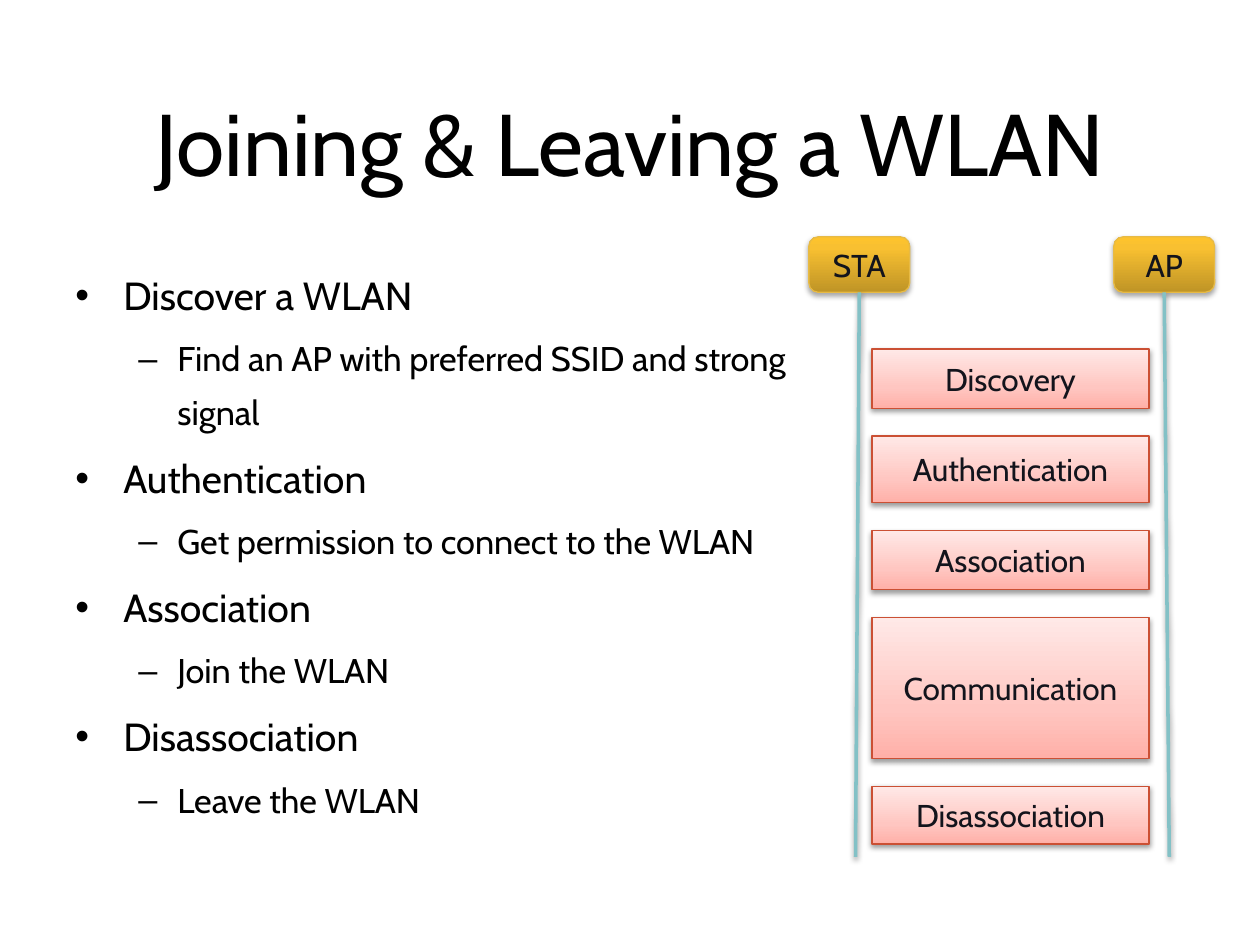
from lxml import etree
from pptx import Presentation
from pptx import util as u
from pptx.dml.color import RGBColor
from pptx.enum import shapes, text
from pptx.oxml import parse_xml
from pptx.oxml.ns import qn

NS = 'xmlns:a="http://schemas.openxmlformats.org/drawingml/2006/main"'
FONT = "Cabin"
HEX = {"black": "000000", "ink": "13141C", "gold": "E7BA45",
       "red": "CB5034", "teal": "83C1C6"}
# Gradient stops, from the bottom of a shape to its top
GOLD = [(0, "BF9426"), (80, "F8C031"), (100, "FDC32D")]
PINK = [(0, "FFB0A8"), (35, "FFC6C1"), (100, "FFE9E7")]

TOPICS = [
    ("Discover a WLAN", "Find an AP with preferred SSID and strong signal"),
    ("Authentication", "Get permission to connect to the WLAN"),
    ("Association", "Join the WLAN"),
    ("Disassociation", "Leave the WLAN"),
]
# Bullet, size, left margin and hanging indent of each level
LEVELS = [("•", 22.4, 0.38, 0.38), ("–", 19.6, 0.81, 0.31)]
# Phase name and height in grid rows
PHASES = [("Discovery", 4.7), ("Authentication", 5.3), ("Association", 4.7),
          ("Communication", 11.2), ("Disassociation", 4.6)]

# The slide is a grid of 100 columns by 75 rows
W, H = u.Inches(10), u.Inches(7.5)


def grid(*cells):
    return [int(n * (W / 100, H / 75)[i % 2]) for i, n in enumerate(cells)]


def rgb(name):
    return RGBColor.from_string(HEX[name])


def add_run(para, words, size, color):
    run = para.add_run()
    run.text = words
    run.font.name, run.font.size = FONT, u.Pt(size)
    run.font.color.rgb = rgb(color)


def cast(part, alpha=38, drop=1.6):
    """Give a part a soft shadow straight below it."""
    props = part._element.spPr
    for old in props.findall(qn("a:effectLst")):
        props.remove(old)
    props.append(parse_xml(
        f'<a:effectLst {NS}><a:outerShdw blurRad="{u.Pt(3.1)}" '
        f'dist="{u.Pt(drop)}" dir="5400000" rotWithShape="0">'
        f'<a:srgbClr val="000000"><a:alpha val="{alpha * 1000}"/></a:srgbClr>'
        '</a:outerShdw></a:effectLst>'))


def shade(shape, stops):
    shape.fill.gradient()
    shape.fill.gradient_angle = 90
    rows = "".join(f'<a:gs pos="{pos * 1000}"><a:srgbClr val="{val}"/></a:gs>'
                   for pos, val in stops)
    old = shape._element.spPr.find(qn("a:gradFill")).find(qn("a:gsLst"))
    old.getparent().replace(old, parse_xml(f'<a:gsLst {NS}>{rows}</a:gsLst>'))


def add_box(slide, kind, box, label, stops, edge, **shadow):
    shape = slide.shapes.add_shape(kind, *grid(*box))
    shade(shape, stops)
    shape.line.color.rgb, shape.line.width = rgb(edge), u.Pt(0.75)
    cast(shape, **shadow)
    frame = shape.text_frame
    frame.vertical_anchor = text.MSO_ANCHOR.MIDDLE
    para = frame.paragraphs[0]
    para.alignment = text.PP_ALIGN.CENTER
    add_run(para, label, 18, "ink")
    return shape


def add_title(slide, box, words):
    title = slide.shapes.title
    title.left, title.top, title.width, title.height = grid(*box)
    title.text_frame.vertical_anchor = text.MSO_ANCHOR.MIDDLE
    para = title.text_frame.paragraphs[0]
    para.alignment = text.PP_ALIGN.CENTER
    add_run(para, words, 50, "black")


def add_list(slide, box, topics):
    frame = slide.shapes.add_textbox(*grid(*box)).text_frame
    frame.word_wrap = True
    frame.vertical_anchor = text.MSO_ANCHOR.MIDDLE
    items = [(lvl, words) for pair in topics for lvl, words in enumerate(pair)]
    for i, (lvl, words) in enumerate(items):
        mark, size, left, hang = LEVELS[lvl]
        para = frame.add_paragraph() if i else frame.paragraphs[0]
        para.level, para.line_spacing = lvl, 1.3
        if i:
            para.space_before = u.Pt(round(size * 0.2, 1))
        props = para._p.get_or_add_pPr()
        props.set("marL", str(u.Inches(left)))
        props.set("indent", str(-u.Inches(hang)))
        etree.SubElement(props, qn("a:buFont")).set("typeface", "Arial")
        etree.SubElement(props, qn("a:buChar")).set("char", mark)
        add_run(para, words, size, "black")


def add_flow(slide, box):
    left, top, wide, high = box
    head_w, head_h = 8, 4.4

    # Two stations, each with a lifeline that leans a little outwards
    for x, name, lean in ((left, "STA", -0.3),
                          (left + wide - head_w, "AP", 0.4)):
        head = add_box(slide, shapes.MSO_SHAPE.ROUNDED_RECTANGLE,
                       (x, top, head_w, head_h), name, GOLD, "gold",
                       alpha=35, drop=1.8)
        mid = x + head_w / 2
        line = slide.shapes.add_connector(
            shapes.MSO_CONNECTOR.STRAIGHT,
            *grid(mid, top + head_h, mid + lean, top + high))
        line.begin_connect(head, 2)
        line.line.color.rgb, line.line.width = rgb("teal"), u.Pt(2)
        cast(line)

    # Phases stacked with equal gaps between the lifelines
    y, gap = top + 8.9, 2.2
    for name, tall in PHASES:
        add_box(slide, shapes.MSO_SHAPE.RECTANGLE, (left + 5, y, 22, tall),
                name, PINK, "red")
        y += tall + gap


def main():
    deck = Presentation()
    deck.slide_width, deck.slide_height = W, H
    slide = deck.slides.add_slide(deck.slide_layouts[5])
    add_title(slide, (5, 5, 90, 12.5), "Joining & Leaving a WLAN")
    add_list(slide, (5, 17.5, 59.2, 50.5), TOPICS)
    add_flow(slide, (64.2, 18.8, 32.2, 49.2))
    deck.save("out.pptx")


if __name__ == "__main__":
    main()
